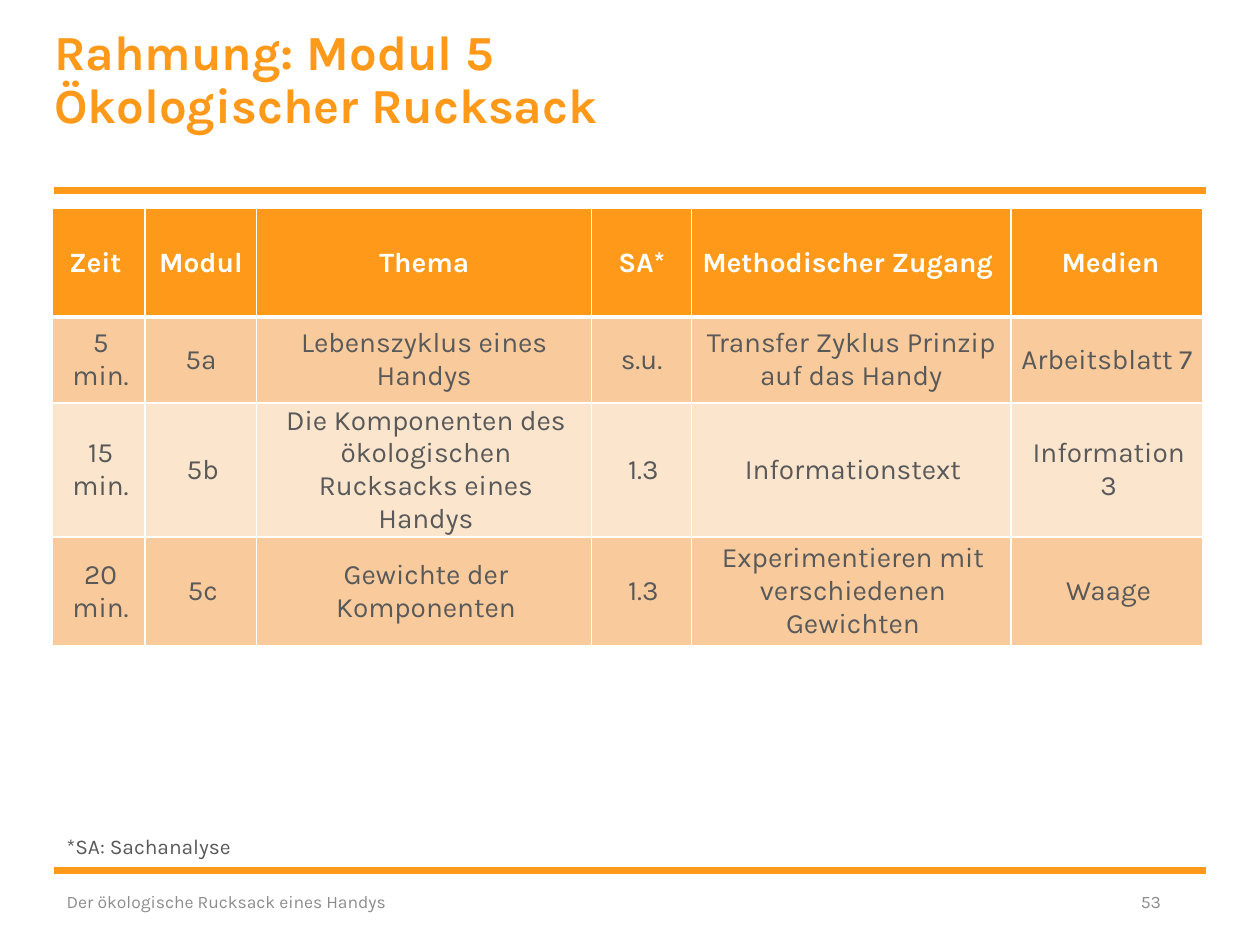
from lxml import etree
from pptx import Presentation
from pptx.dml.color import RGBColor
from pptx.enum.shapes import MSO_CONNECTOR
from pptx.enum.text import MSO_ANCHOR, PP_ALIGN
from pptx.oxml.ns import qn
from pptx.util import Pt

LEFT, CENTER, RIGHT = PP_ALIGN.LEFT, PP_ALIGN.CENTER, PP_ALIGN.RIGHT
TOP, MIDDLE = MSO_ANCHOR.TOP, MSO_ANCHOR.MIDDLE
STRAIGHT = MSO_CONNECTOR.STRAIGHT

COLORS = {
    "accent": "FF9919",
    "band_dark": "F9CB9C",
    "band_light": "FCE5CD",
    "text": "595959",
    "footer": "8C8C8C",
    "white": "FFFFFF",
}
FONT = "Karla"
INSETS = (7.2, 3.6, 7.2, 3.6)
CELL_INSETS = (5, 0, 5, 0)


def rgb(name):
    return RGBColor.from_string(COLORS[name])


class SlideBuilder:
    """Holds the style and the current slide."""

    def __init__(self, s):
        self.s = s

    def fill_paragraph(self, p, text, size, color, bold=False, **para):
        p.text = text
        for key, value in para.items():
            setattr(p, key, value)
        for r in p.runs:
            for key, value in {"name": FONT, "size": Pt(size), "bold": bold}.items():
                setattr(r.font, key, value)
            r.font.color.rgb = rgb(color)

    def set_insets(self, target, insets):
        for side, value in zip(("left", "top", "right", "bottom"), insets):
            setattr(target, f"margin_{side}", Pt(value))

    def text(self, box, text, size, color, anchor=TOP, insets=INSETS, **style):
        sp = self.s.shapes.add_textbox(*map(Pt, box))
        tf = sp.text_frame
        tf.word_wrap = True
        tf.vertical_anchor = anchor
        self.set_insets(tf, insets)
        self.fill_paragraph(tf.paragraphs[0], text, size, color, **style)

    def rule(self, x1, x2, y, width):
        line = self.s.shapes.add_connector(STRAIGHT, Pt(x1), Pt(y), Pt(x2), Pt(y))
        line.line.color.rgb = rgb("accent")
        line.line.width = Pt(width)
        etree.SubElement(line._element.spPr, qn("a:effectLst"))

    def border(self, cell, bottom):
        tcPr = cell._tc.get_or_add_tcPr()
        for side, width in (("L", 1), ("R", 1), ("T", 1), ("B", bottom)):
            ln = etree.SubElement(tcPr, qn(f"a:ln{side}"), w=str(Pt(width)))
            fill = etree.SubElement(ln, qn("a:solidFill"))
            etree.SubElement(fill, qn("a:srgbClr"), val=COLORS["white"])

    def cell(self, cell, text, fill, color, bottom=1, indent=0, **style):
        self.border(cell, bottom)
        cell.fill.solid()
        cell.fill.fore_color.rgb = rgb(fill)
        cell.vertical_anchor = MIDDLE
        self.set_insets(cell, CELL_INSETS)
        p = cell.text_frame.paragraphs[0]
        self.fill_paragraph(p, text, 16, color, alignment=CENTER, **style)
        if indent:
            p._p.get_or_add_pPr().set("marL", str(Pt(indent)))

    def table(self, left, top, widths, heights, rows):
        frame = self.s.shapes.add_table(
            len(rows), len(widths), Pt(left), Pt(top), Pt(sum(widths)), Pt(sum(heights)))
        table = frame.table
        for column, width in zip(table.columns, widths):
            column.width = Pt(width)
        for row, height in zip(table.rows, heights):
            row.height = Pt(height)
        for i, row in enumerate(rows):
            for j, text in enumerate(row):
                if i == 0:
                    style = {"fill": "accent", "color": "white", "bold": True, "bottom": 3}
                else:
                    style = {"fill": "band_dark" if i % 2 else "band_light",
                             "color": "text",
                             "indent": 2 if i > 1 or j == 0 else 0}
                self.cell(table.cell(i, j), text, **style)


ROWS = [
    ["Zeit ", "Modul", "Thema", "SA*", "Methodischer Zugang ", " Medien"],
    ["5 min.", "5a", "Lebenszyklus eines Handys", "s.u.",
     "Transfer Zyklus Prinzip auf das Handy", "Arbeitsblatt 7"],
    ["15 min.", "5b", "Die Komponenten des ökologischen Rucksacks eines Handys", "1.3",
     "Informationstext", "Information 3"],
    ["20 min.", "5c", "Gewichte der Komponenten", "1.3",
     "Experimentieren mit verschiedenen Gewichten", "Waage"],
]


def main():
    prs = Presentation()
    prs.slide_width, prs.slide_height = Pt(720), Pt(540)
    b = SlideBuilder(prs.slides.add_slide(prs.slide_layouts[6]))

    # Rules below the title and above the footer
    for y in (108.8, 497.5):
        b.rule(31, 689, y, 4)

    # Title
    b.text((31, 16, 482, 84), "Rahmung: Modul 5\vÖkologischer Rucksack", 28, "accent",
           insets=(0, 0, 0, 0), bold=True, line_spacing=0.9)

    # Footer and page number
    b.text((31, 500.5, 243, 29), "Der ökologische Rucksack eines Handys", 10, "footer",
           anchor=MIDDLE, alignment=LEFT)
    b.text((541.5, 500.5, 129, 29), "53", 10, "footer", anchor=MIDDLE, alignment=RIGHT)

    # Module plan
    b.table(30, 119.2, (53, 63.7, 191.5, 57, 182.6, 109.7), (62, 49, 62, 62), ROWS)

    # Footnote
    b.text((31, 472.5, 198, 22), "*SA: Sachanalyse", 12, "text")

    prs.save("out.pptx")


if __name__ == "__main__":
    main()
